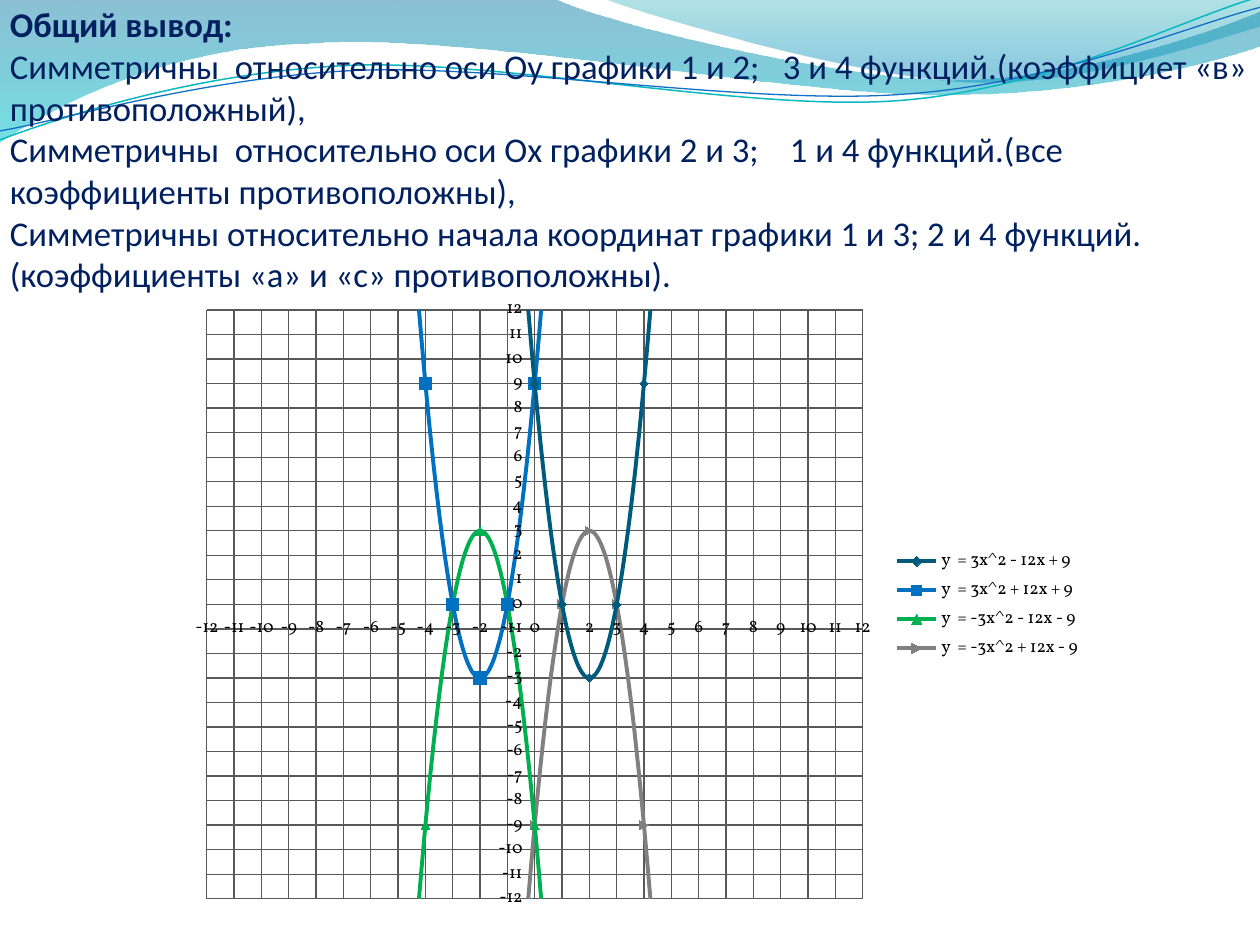
"""Build the slide on the symmetry of four parabolas."""
from dataclasses import dataclass
from typing import Optional

from lxml import etree
from pptx import Presentation
from pptx.chart.data import XyChartData
from pptx.dml.color import RGBColor
from pptx.enum.chart import XL_CHART_TYPE, XL_LEGEND_POSITION, XL_MARKER_STYLE, XL_TICK_MARK
from pptx.enum.text import MSO_ANCHOR
from pptx.oxml import parse_xml
from pptx.oxml.ns import nsdecls, qn
from pptx.util import Cm, Pt

SCATTER = XL_CHART_TYPE.XY_SCATTER_SMOOTH
LEGEND_RIGHT = XL_LEGEND_POSITION.RIGHT
SQUARE = XL_MARKER_STYLE.SQUARE
TICK_OUTSIDE = XL_TICK_MARK.OUTSIDE
ANCHOR_BOTTOM = MSO_ANCHOR.BOTTOM

COLORS = {
    "navy": "002060", "black": "000000", "grid": "595959",
    "deep": "0074A1", "aqua": "00C6CF", "sea": "00A1A9", "sky": "008BBF",
    "cyan": "0AB8BF", "blue": "0F6FC6",
    "teal": "005A7C", "azure": "0070C0", "green": "00B050", "gray": "808080",
}
CHART_WIDTH = 18.47
CHART_HEIGHT = 12.88
TITLE = "Общий вывод:"
CONCLUSIONS = [
    "Симметричны  относительно оси Оу графики 1 и 2;   3 и 4 функций."
    "(коэффициет «в» противоположный),",
    "Симметричны  относительно оси Ох графики 2 и 3;    1 и 4 функций."
    "(все коэффициенты противоположны),",
    "Симметричны относительно начала координат графики 1 и 3; 2 и 4 функций. "
    "(коэффициенты «а» и «с» противоположны).",
]


@dataclass
class Stop:
    color: str
    position: float
    opacity: int


@dataclass
class Wave:
    start: tuple
    segments: list
    stops: Optional[list] = None
    line: str = ""
    width: float = 0.75


@dataclass
class Parabola:
    name: str
    a: int
    b: int
    c: int
    first_x: int
    color: str
    marker: Optional[int] = None


WAVES = [
    Wave((0, 0), [
        (11.18, -0.03),
        (12.09, 0.43, 16.87, 1.6, 19.25, 1.6),
        (21.67, 1.6, 24.33, 0.66, 25.4, 0.23),
        (25.43, 0.91),
        (24.97, 1.12, 22.1, 1.93, 18.95, 1.91),
        (15.8, 1.91, 9.7, 0.71, 6.53, 0.86),
        (3.28, 0.91, 1.17, 2.11, -0.03, 2.87),
    ], [Stop("deep", 0, 45), Stop("aqua", 1, 55)]),
    Wave((12.17, -0.03), [
        (12.93, 0.28, 17.32, 1.57, 19.53, 1.65),
        (21.74, 1.75, 24.41, 0.81, 25.4, 0.53),
        (25.4, 0),
    ], [Stop("sea", 0, 30), Stop("sky", 0.8, 45)]),
    Wave((0, 2.82), [
        (1.22, 2.36, 4.01, 1.45, 7.04, 1.32),
        (10.03, 1.19, 15.06, 2.26, 18.11, 2.03),
        (21.16, 1.8, 23.83, 0.38, 25.35, -0.05),
    ], line="cyan", width=0.85),
    Wave((0, 2.64), [
        (1.19, 2.44, 4.17, 1.55, 7.19, 1.42),
        (10.24, 1.3, 15.16, 2.13, 18.21, 1.9),
        (21.23, 1.7, 23.9, 0.53, 25.4, 0.15),
    ], line="blue"),
]
PARABOLAS = [
    Parabola("y  = 3x^2 - 12x + 9", 3, -12, 9, -3, "teal"),
    Parabola("y  = 3x^2 + 12x + 9", 3, 12, 9, -7, "azure", SQUARE),
    Parabola("y  = -3x^2 - 12x - 9", -3, -12, -9, -7, "green"),
    Parabola("y  = -3x^2 + 12x - 9", -3, 12, -9, -3, "gray"),
]


def rgb(name: str) -> RGBColor:
    """Return a named colour."""
    return RGBColor.from_string(COLORS[name])


def apply(target, values: dict) -> None:
    """Set each named attribute on the target."""
    for name, value in values.items():
        setattr(target, name, value)


def bend(shape, segments: list) -> None:
    """Join each three straight steps of a curved segment into one cubic curve."""
    steps = iter(list(shape._element.iter(qn("a:lnTo"))))
    for segment in segments:
        parts = [next(steps) for _ in range(len(segment) // 2)]
        if len(parts) == 1:
            continue
        curve = etree.Element(qn("a:cubicBezTo"))
        parts[0].addprevious(curve)
        for part in parts:
            curve.append(part[0])
            part.getparent().remove(part)


def add_wave(page, wave: Wave) -> None:
    """Draw a filled or outlined wave."""
    builder = page.shapes.build_freeform(Cm(wave.start[0]), Cm(wave.start[1]))
    points = [(Cm(x), Cm(y)) for segment in wave.segments
              for x, y in zip(segment[::2], segment[1::2])]
    builder.add_line_segments(points, close=bool(wave.stops))
    shape = builder.convert_to_shape()
    bend(shape, wave.segments)
    shape.shadow.inherit = False
    if not wave.stops:
        shape.fill.background()
        shape.line.color.rgb = rgb(wave.line)
        shape.line.width = Pt(wave.width)
        return
    shape.line.fill.background()
    shape.fill.gradient()
    shape.fill.gradient_angle = 270
    for target, stop in zip(shape.fill.gradient_stops, wave.stops):
        target.color.rgb = rgb(stop.color)
        target.position = stop.position
    colors = shape._element.spPr.iter(qn("a:srgbClr"))
    for color, stop in zip(colors, wave.stops):
        etree.SubElement(color, qn("a:alpha")).set("val", str(stop.opacity * 1000))


def add_conclusions(page) -> None:
    """Write the heading and the conclusions."""
    box = page.shapes.add_textbox(Cm(0.2), Cm(-0.61), Cm(25.2), Cm(6.55))
    frame = box.text_frame
    apply(frame, {"word_wrap": True, "vertical_anchor": ANCHOR_BOTTOM, "margin_left": 0,
                  "margin_right": 0, "margin_top": Cm(0.13), "margin_bottom": 0})
    para = frame.paragraphs[0]
    apply(para.font, {"name": "Calibri", "size": Pt(19.8)})
    for index, text in enumerate([TITLE, *CONCLUSIONS]):
        if index:
            para.add_line_break()
        span = para.add_run()
        span.text = text
        apply(span.font, {"name": "Calibri", "size": Pt(19.8), "bold": index == 0})
        span.font.color.rgb = rgb("navy")


def place(parent, inner: bool, x: float, y: float, w: float, h: float) -> None:
    """Give a chart part a fixed place, in centimetres within the chart."""
    fractions = {"x": x / CHART_WIDTH, "y": y / CHART_HEIGHT,
                 "w": w / CHART_WIDTH, "h": h / CHART_HEIGHT}
    target = '<c:layoutTarget val="inner"/>' if inner else ""
    modes = "".join(f'<c:{key}Mode val="edge"/>' for key in "xy")
    sizes = "".join(f'<c:{key} val="{value}"/>' for key, value in fractions.items())
    for old in parent.findall(qn("c:layout")):
        parent.remove(old)
    layout = parse_xml(f'<c:layout {nsdecls("c")}><c:manualLayout>{target}{modes}{sizes}'
                       '</c:manualLayout></c:layout>')
    parent.insert(0 if inner else 1, layout)


def add_graphs(page) -> None:
    """Plot the four parabolas on one grid."""
    data = XyChartData()
    for parabola in PARABOLAS:
        series = data.add_series(parabola.name)
        for x in range(parabola.first_x, parabola.first_x + 11):
            series.add_data_point(x, parabola.a * x * x + parabola.b * x + parabola.c)
    chart = page.shapes.add_chart(SCATTER, Cm(3.58), Cm(5.77), Cm(CHART_WIDTH),
                                  Cm(CHART_HEIGHT), data).chart
    apply(chart, {"has_title": False, "has_legend": True})
    apply(chart.font, {"name": "Vollkorn", "size": Pt(10)})
    chart.font.color.rgb = rgb("black")
    chart.plots[0].vary_by_categories = False
    apply(chart.legend, {"position": LEGEND_RIGHT, "include_in_layout": False})
    for axis in (chart.category_axis, chart.value_axis):
        apply(axis, {"minimum_scale": -12, "maximum_scale": 12, "major_unit": 1,
                     "has_major_gridlines": True, "major_tick_mark": TICK_OUTSIDE})
        for line in (axis.format.line, axis.major_gridlines.format.line):
            line.color.rgb = rgb("grid")
            line.width = Pt(0.75)
    for series, parabola in zip(chart.plots[0].series, PARABOLAS):
        series._element.get_or_add_smooth().val = True
        series.format.line.color.rgb = rgb(parabola.color)
        series.format.line.width = Pt(2.25)
        if parabola.marker is not None:
            apply(series.marker, {"style": parabola.marker, "size": 7})
        series.marker.format.fill.solid()
        series.marker.format.fill.fore_color.rgb = rgb(parabola.color)
        series.marker.format.line.color.rgb = rgb(parabola.color)
    place(chart._chartSpace.chart.plotArea, True, x=0.59, y=0.48, w=13.22, h=11.87)
    place(chart.legend._element, False, x=14.47, y=5.2, w=3.7, h=2.45)


def main() -> None:
    """Assemble and save the deck."""
    deck = Presentation()
    apply(deck, {"slide_width": Cm(25.4), "slide_height": Cm(19.05)})
    page = deck.slides.add_slide(deck.slide_layouts[6])
    for wave in WAVES:
        add_wave(page, wave)
    add_conclusions(page)
    add_graphs(page)
    deck.save("out.pptx")


if __name__ == "__main__":
    main()
